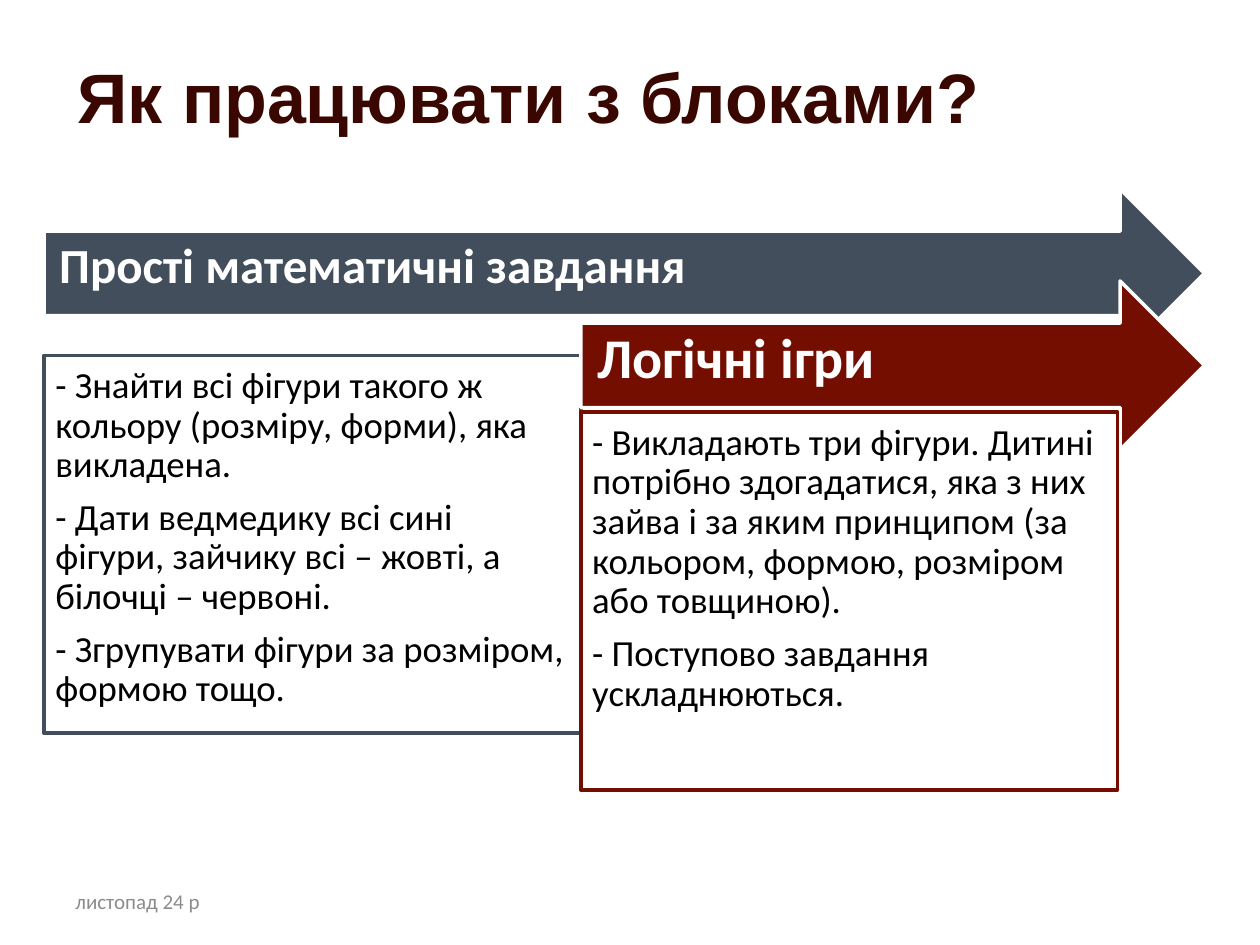
"""Build a slide with two overlapping arrows, each heading a box of tasks."""
from pptx import Presentation
from pptx import util as u
from pptx.dml.color import RGBColor
from pptx.enum import shapes, text

COLORS = {
    "title": "3A0700", "slate": "424E5B", "maroon": "730E00",
    "white": "FFFFFF", "black": "000000", "gray": "8C8C8C",
}
TITLE = "Як працювати з блоками?"
DATE = "листопад 24 р"
STAGES = [
    {
        "heading": "Прості математичні завдання", "size": 28, "color": "slate",
        "left": 0.35, "top": 1.5, "inset": 0.12, "box_top": 2.82,
        "tasks": [
            "- Знайти всі фігури такого ж кольору (розміру, форми), яка викладена.",
            "- Дати ведмедику всі сині фігури, зайчику всі – жовті, а білочці – червоні.",
            "- Згрупувати фігури за розміром, формою тощо.",
        ],
    },
    {
        "heading": "Логічні ігри", "size": 32, "color": "maroon",
        "left": 4.61, "top": 2.23, "inset": 0.13, "box_top": 3.27,
        "tasks": [
            "- Викладають три фігури. Дитині потрібно здогадатися, яка з них зайва "
            "і за яким принципом (за кольором, формою, розміром або товщиною).",
            "- Поступово завдання ускладнюються.",
        ],
    },
]
ARROW_RIGHT, ARROW_HEIGHT = 9.56, 1.34
BOX_WIDTH, BOX_HEIGHT, BOX_INSET = 4.26, 3, 0.09


def rgb(name):
    return RGBColor.from_string(COLORS[name])


def write(shape, lines, insets, font, color, anchor, **layout):
    frame = shape.text_frame
    left, top, right, bottom = map(u.Inches, insets)
    frame_format = {
        "margin_left": left, "margin_top": top,
        "margin_right": right, "margin_bottom": bottom,
        "word_wrap": True, "auto_size": text.MSO_AUTO_SIZE.NONE,
        "vertical_anchor": anchor,
    }
    for name, value in frame_format.items():
        setattr(frame, name, value)
    frame.text = "\n".join(lines)
    for paragraph in frame.paragraphs:
        for name, value in layout.items():
            setattr(paragraph, name, value)
        for run in paragraph.runs:
            for name, value in font.items():
                setattr(run.font, name, value)
            run.font.color.rgb = rgb(color)


def add_block(slide, kind, place, fill, line):
    shape = slide.shapes.add_shape(kind, *map(u.Inches, place))
    shape.shadow.inherit = False
    shape.fill.solid()
    shape.fill.fore_color.rgb = rgb(fill)
    shape.line.color.rgb = rgb(line)
    shape.line.width = u.Pt(2)
    return shape


def add_stage(slide, stage):
    left, inset = stage["left"], stage["inset"]
    blocks = [
        (shapes.MSO_SHAPE.RIGHT_ARROW,
         (left, stage["top"], ARROW_RIGHT - left, ARROW_HEIGHT),
         stage["color"], "white", [stage["heading"]],
         (inset, inset, 0.28, 0.21), stage["size"], True, "white",
         text.MSO_ANCHOR.MIDDLE),
        (shapes.MSO_SHAPE.RECTANGLE,
         (left, stage["box_top"], BOX_WIDTH, BOX_HEIGHT),
         "white", stage["color"], stage["tasks"],
         [BOX_INSET] * 4, 21, False, "black", text.MSO_ANCHOR.TOP),
    ]
    for kind, place, fill, line, lines, insets, size, bold, color, anchor in blocks:
        shape = add_block(slide, kind, place, fill, line)
        font = {"name": "Calibri", "size": u.Pt(size), "bold": bold}
        write(shape, lines, insets, font, color, anchor,
              alignment=text.PP_ALIGN.LEFT, line_spacing=0.9,
              space_after=u.Pt(0.35 * size))


def main():
    presentation = Presentation()
    presentation.slide_width, presentation.slide_height = u.Inches(10), u.Inches(7.5)
    slide = presentation.slides.add_slide(presentation.slide_layouts[5])

    title = slide.shapes.title
    title_place = {"left": 0.6, "top": 0.68, "width": 7.19, "height": 1.02}
    for name, value in title_place.items():
        setattr(title, name, u.Inches(value))
    write(title, [TITLE], [0] * 4,
          {"name": "Arial", "size": u.Pt(40), "bold": True}, "title",
          text.MSO_ANCHOR.TOP, alignment=text.PP_ALIGN.CENTER,
          line_spacing=u.Pt(29.6))

    for stage in STAGES:
        add_stage(slide, stage)

    date = slide.shapes.add_textbox(*map(u.Inches, (0.5, 6.95, 2.33, 0.4)))
    write(date, [DATE], (0.1, 0.05, 0.1, 0.05),
          {"name": "Calibri", "size": u.Pt(12)}, "gray", text.MSO_ANCHOR.MIDDLE)
    presentation.save("out.pptx")


if __name__ == "__main__":
    main()
